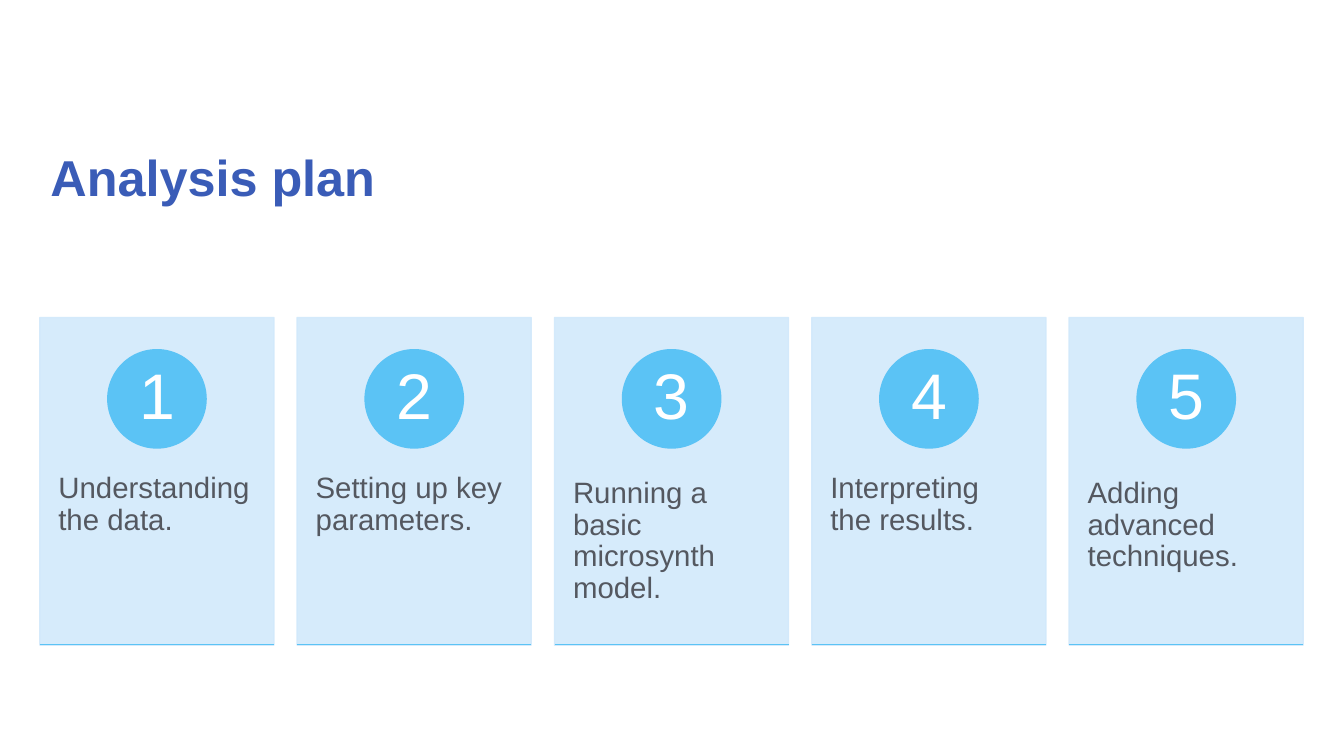
from dataclasses import dataclass

from lxml import etree
from pptx import Presentation
from pptx.dml.color import RGBColor
from pptx.enum.shapes import MSO_CONNECTOR, MSO_SHAPE
from pptx.enum.text import MSO_ANCHOR, PP_ALIGN
from pptx.oxml.ns import qn
from pptx.shapes.autoshape import Shape
from pptx.slide import Slide
from pptx.text.text import TextFrame
from pptx.util import Pt

RECT, OVAL = MSO_SHAPE.RECTANGLE, MSO_SHAPE.OVAL
STRAIGHT = MSO_CONNECTOR.STRAIGHT
TOP, MIDDLE = MSO_ANCHOR.TOP, MSO_ANCHOR.MIDDLE
LEFT, CENTER = PP_ALIGN.LEFT, PP_ALIGN.CENTER

COLORS = {
    "title": "3A5CB7",
    "card": "D2E9FB",
    "accent": "5BC3F5",
    "body": "545860",
    "number": "FFFFFF",
}
FONT = "Arial"
CARD_LEFT, CARD_TOP, CARD_W, CARD_H = 28.5, 226.8, 167.2, 234
CARD_PITCH = 183.8
CIRCLE_TOP, CIRCLE_SIZE = 249.8, 70.2
LABEL_TOP, LABEL_H = 315.4, 140.4
RULE_Y = 460.4


@dataclass
class Step:
    """One numbered step of the plan."""

    number: int
    label: str

    @property
    def left(self) -> float:
        """Return the left edge of the step's card."""
        return CARD_LEFT + (self.number - 1) * CARD_PITCH


STEPS = [
    Step(1, "Understanding the data."),
    Step(2, "Setting up key parameters."),
    Step(3, "Running a basic microsynth model."),
    Step(4, "Interpreting the results."),
    Step(5, "Adding advanced techniques."),
]


def rgb(name: str) -> RGBColor:
    """Look up a named colour."""
    return RGBColor.from_string(COLORS[name])


def set_text(tf: TextFrame, text: str, size: float, color: str, align: PP_ALIGN,
             anchor: MSO_ANCHOR, inset_x: float, inset_y: float, bold: bool = False) -> None:
    """Write one formatted paragraph into a text frame."""
    tf.word_wrap = True
    tf.vertical_anchor = anchor
    tf.margin_left = tf.margin_right = Pt(inset_x)
    tf.margin_top = tf.margin_bottom = Pt(inset_y)
    p = tf.paragraphs[0]
    p.text = text
    p.alignment = align
    p.line_spacing = 0.9
    p.font.name, p.font.size, p.font.bold = FONT, Pt(size), bold
    p.font.color.rgb = rgb(color)


def add_filled(s: Slide, kind: MSO_SHAPE, x: float, y: float, w: float, h: float,
               color: str) -> Shape:
    """Add a shape whose fill and outline share a colour."""
    sp = s.shapes.add_shape(kind, Pt(x), Pt(y), Pt(w), Pt(h))
    sp.shadow.inherit = False
    sp.fill.solid()
    sp.fill.fore_color.rgb = rgb(color)
    sp.line.color.rgb = rgb(color)
    sp.line.width = Pt(1)
    return sp


def set_opacity(sp: Shape, percent: int) -> None:
    """Make the fill and outline of a shape partly transparent."""
    for clr in sp.element.spPr.iter(qn("a:srgbClr")):
        etree.SubElement(clr, qn("a:alpha"), val=str(percent * 1000))


def add_rule(s: Slide, x: float) -> None:
    """Draw the accent rule along the foot of a card."""
    rule = s.shapes.add_connector(STRAIGHT, Pt(x), Pt(RULE_Y), Pt(x + CARD_W), Pt(RULE_Y))
    rule.line.color.rgb = rgb("accent")
    rule.line.width = Pt(1)
    etree.SubElement(rule.element.spPr, qn("a:effectLst"))


def add_step(s: Slide, step: Step) -> None:
    """Draw a card with its label, numbered circle and rule."""
    card = add_filled(s, RECT, step.left, CARD_TOP, CARD_W, CARD_H, "card")
    set_opacity(card, 90)
    label = s.shapes.add_textbox(Pt(step.left), Pt(LABEL_TOP), Pt(CARD_W), Pt(LABEL_H))
    set_text(label.text_frame, step.label, 21, "body", LEFT, TOP, 13.2, 26)
    circle_left = step.left + (CARD_W - CIRCLE_SIZE) / 2
    circle = add_filled(s, OVAL, circle_left, CIRCLE_TOP, CIRCLE_SIZE, CIRCLE_SIZE, "accent")
    set_text(circle.text_frame, str(step.number), 46, "number", CENTER, MIDDLE, 5.5, 1)
    add_rule(s, step.left)


def main() -> None:
    """Build the analysis plan slide."""
    prs = Presentation()
    prs.slide_width, prs.slide_height = Pt(960), Pt(540)
    s = prs.slides.add_slide(prs.slide_layouts[5])
    title = s.shapes.title
    title.left, title.top, title.width, title.height = Pt(28.8), Pt(76.4), Pt(902.8), Pt(104.4)
    set_text(title.text_frame, "Analysis plan", 36, "title", LEFT, MIDDLE, 7.2, 3.6, bold=True)
    for step in STEPS:
        add_step(s, step)
    prs.save("out.pptx")


if __name__ == "__main__":
    main()
